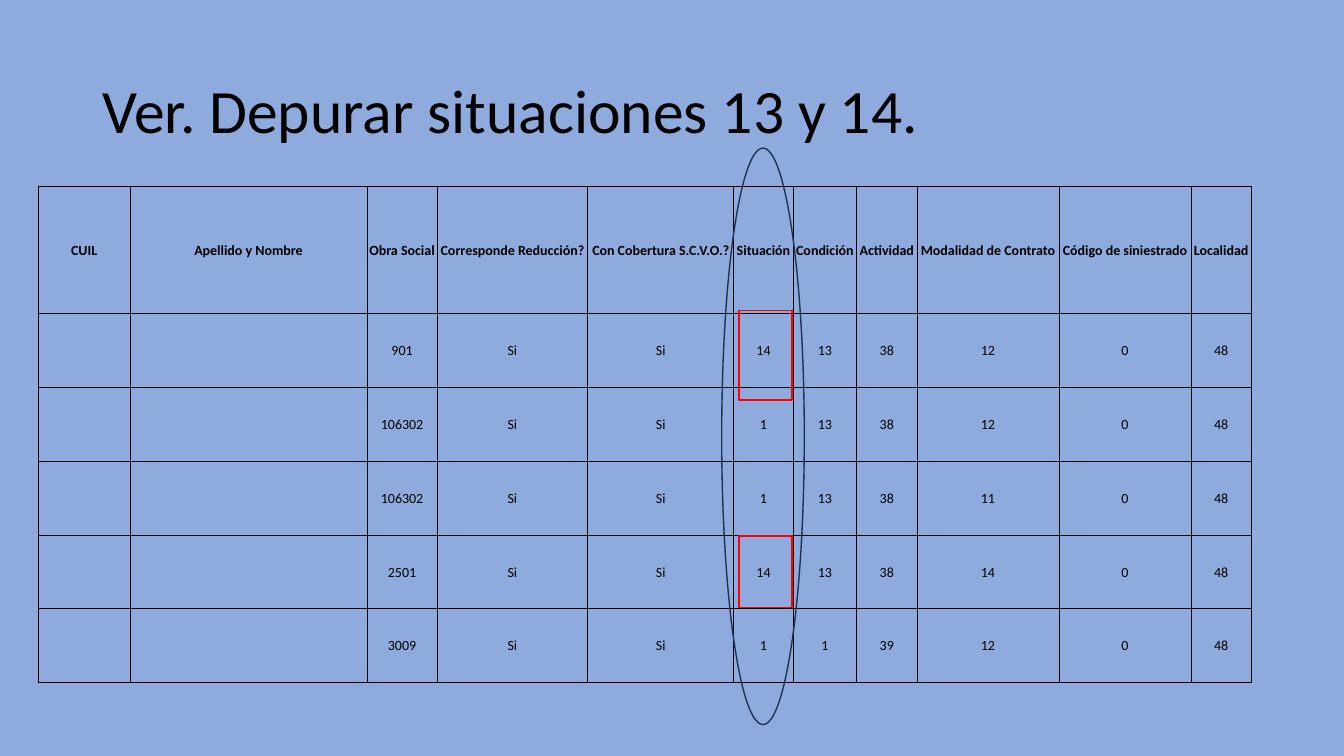
"""Builds a slide with a payroll table whose situations 13 and 14 need review."""
from dataclasses import dataclass

from lxml.etree import SubElement
from pptx import Presentation
from pptx.dml.color import RGBColor as Color
from pptx.enum.shapes import MSO_SHAPE as Shape
from pptx.enum.text import MSO_ANCHOR as Anchor, PP_ALIGN as Align
from pptx.oxml.ns import qn
from pptx.util import Pt

TITLE = "Ver. Depurar situaciones 13 y 14."
COLUMNS = [
    ("CUIL", 65.5),
    ("Apellido y Nombre", 169.2),
    ("Obra Social", 50.2),
    ("Corresponde Reducción?", 107.5),
    ("Con Cobertura S.C.V.O.?", 104.4),
    ("Situación", 42.4),
    ("Condición", 45.4),
    ("Actividad", 43),
    ("Modalidad de Contrato", 101.5),
    ("Código de siniestrado", 94.4),
    ("Localidad", 43),
]
RECORDS = [
    ("", "", "901", "Si", "Si", "14", "13", "38", "12", "0", "48"),
    ("", "", "106302", "Si", "Si", "1", "13", "38", "12", "0", "48"),
    ("", "", "106302", "Si", "Si", "1", "13", "38", "11", "0", "48"),
    ("", "", "2501", "Si", "Si", "14", "13", "38", "14", "0", "48"),
    ("", "", "3009", "Si", "Si", "1", "1", "39", "12", "0", "48"),
]
HEADER_HEIGHT, RECORD_HEIGHT = 90.9, 52.7
TABLE_LEFT, TABLE_TOP = 27.4, 133.2
TITLE_BOX = (66, 28.8, 828, 104.4)


@dataclass(frozen=True)
class Theme:
    """Colours, font and type sizes."""
    background: str = "8FAADC"
    ink: str = "000000"
    outline: str = "1E3256"
    alert: str = "FF0000"
    font: str = "Calibri"
    title_size: int = 44
    table_size: int = 10
    grid_width: float = 0.5
    mark_width: float = 1


THEME = Theme()
MARKS = [
    (Shape.OVAL, (515.5, 105.8, 59, 411.8), THEME.outline),
    (Shape.RECTANGLE, (527.8, 221.8, 38, 64), THEME.alert),
    (Shape.RECTANGLE, (527.8, 383, 38, 51.1), THEME.alert),
]


def add_text(paragraph, text, size, bold=False):
    """Adds one styled run."""
    run = paragraph.add_run()
    run.text = text
    run.font.name = THEME.font
    run.font.size = Pt(size)
    run.font.bold = bold
    run.font.color.rgb = Color.from_string(THEME.ink)


def add_title(slide):
    """Adds the slide heading."""
    frame = slide.shapes.add_textbox(*map(Pt, TITLE_BOX)).text_frame
    frame.word_wrap = True
    frame.vertical_anchor = Anchor.MIDDLE
    paragraph = frame.paragraphs[0]
    paragraph.line_spacing = 0.9
    add_text(paragraph, TITLE, THEME.title_size)


def draw_borders(cell):
    """Draws a thin line on each side of a cell."""
    properties = cell._tc.get_or_add_tcPr()
    for side in ("a:lnL", "a:lnR", "a:lnT", "a:lnB"):
        line = SubElement(properties, qn(side), w=str(Pt(THEME.grid_width)))
        fill = SubElement(line, qn("a:solidFill"))
        SubElement(fill, qn("a:srgbClr"), val=THEME.ink)


def fill_cell(cell, text, bold):
    """Styles a cell and writes its text."""
    draw_borders(cell)
    cell.fill.background()
    cell.vertical_anchor = Anchor.MIDDLE
    cell.margin_left = cell.margin_right = cell.margin_top = Pt(0.7)
    cell.margin_bottom = Pt(0)
    paragraph = cell.text_frame.paragraphs[0]
    paragraph.alignment = Align.CENTER
    if text:
        add_text(paragraph, text, THEME.table_size, bold)


def add_records(slide):
    """Adds the table of records under its header."""
    headers, widths = zip(*COLUMNS)
    rows = [headers, *RECORDS]
    heights = [HEADER_HEIGHT] + [RECORD_HEIGHT] * len(RECORDS)
    frame = (TABLE_LEFT, TABLE_TOP, sum(widths), sum(heights))
    table = slide.shapes.add_table(len(rows), len(headers), *map(Pt, frame)).table
    table.first_row = table.horz_banding = False
    for column, width in zip(table.columns, widths):
        column.width = Pt(width)
    for row_index, (values, height) in enumerate(zip(rows, heights)):
        table.rows[row_index].height = Pt(height)
        for column_index, text in enumerate(values):
            fill_cell(table.cell(row_index, column_index), text, row_index == 0)


def add_marks(slide):
    """Outlines the situation column and the values to review."""
    for kind, box, color in MARKS:
        shape = slide.shapes.add_shape(kind, *map(Pt, box))
        shape.shadow.inherit = False
        shape.fill.background()
        shape.line.color.rgb = Color.from_string(color)
        shape.line.width = Pt(THEME.mark_width)


def main():
    """Builds and saves the presentation."""
    presentation = Presentation()
    presentation.slide_width, presentation.slide_height = Pt(960), Pt(540)
    slide = presentation.slides.add_slide(presentation.slide_layouts[6])
    slide.background.fill.solid()
    slide.background.fill.fore_color.rgb = Color.from_string(THEME.background)
    add_title(slide)
    add_records(slide)
    add_marks(slide)
    presentation.save("out.pptx")


if __name__ == "__main__":
    main()
